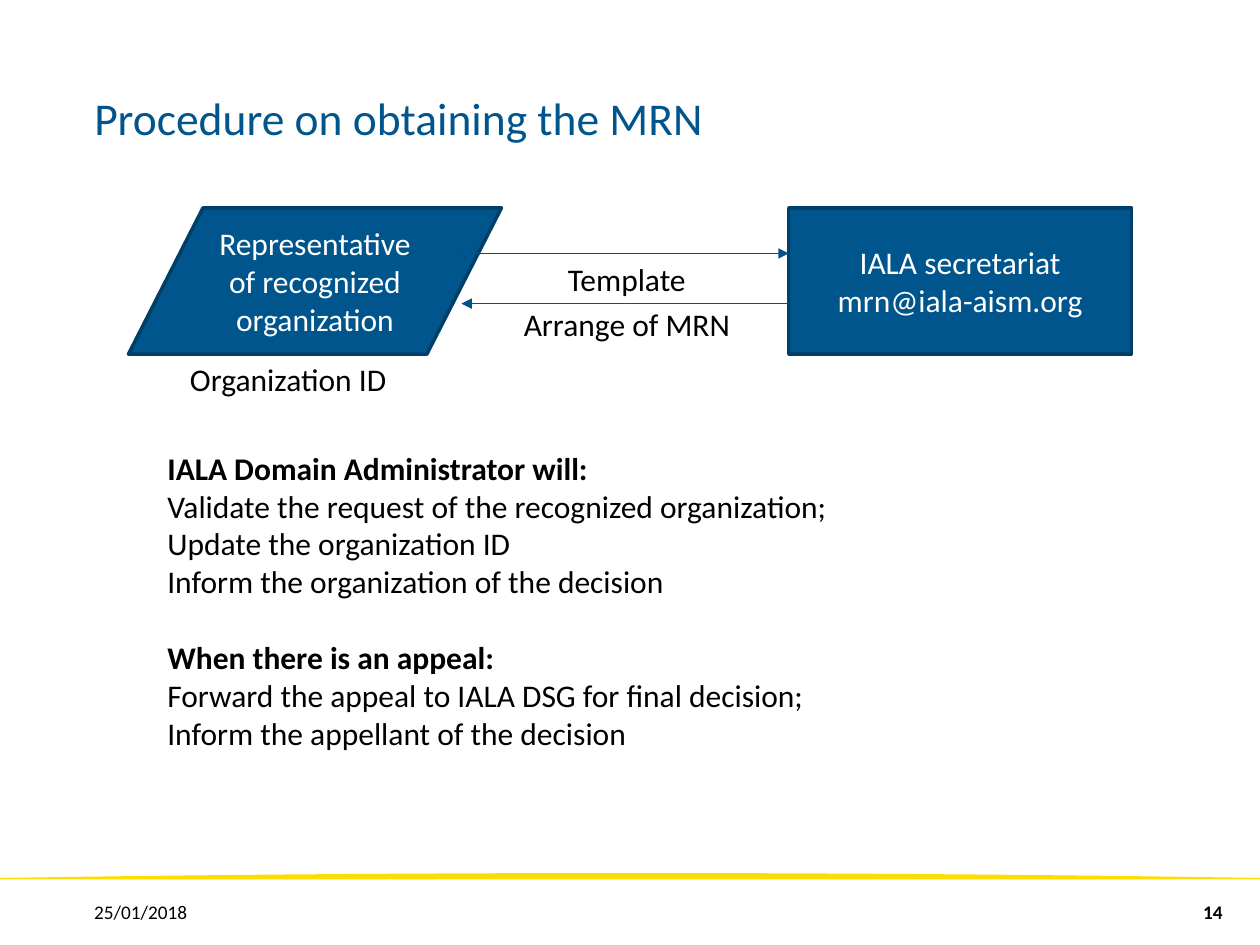
import pptx
import pptx.util
import pptx.dml.color
import pptx.enum.shapes
import pptx.enum.text
import pptx.oxml.ns
from lxml import etree

Cm = pptx.util.Cm
Pt = pptx.util.Pt
ALIGN = pptx.enum.text.PP_ALIGN
ANCHOR = pptx.enum.text.MSO_ANCHOR
SHAPE = pptx.enum.shapes.MSO_SHAPE
qn = pptx.oxml.ns.qn

COLORS = {"blue": "00558C", "outline": "003F68", "arrow": "005389",
          "yellow": "FFDC00", "white": "FFFFFF", "black": "000000"}

TITLE = "Procedure on obtaining the MRN"
PARTIES = [
    (SHAPE.FLOWCHART_DATA, 2.59, 7.52, ["Representative of recognized organization"]),
    (SHAPE.RECTANGLE, 15.9, 6.91, ["IALA secretariat", "mrn@iala-aism.org"]),
]
ARROWS = [((9.3, 5.11), (15.9, 5.11)), ((15.9, 6.12), (9.3, 6.12))]
LABELS = [
    ("Organization ID", 3.58, 7.14, 4.52),
    ("Template", 11.2, 5.11, 2.92),
    ("Arrange of MRN", 10.31, 6.02, 4.72),
]
DUTIES = [
    ("IALA Domain Administrator will:", [
        "Validate the request of the recognized organization;",
        "Update the organization ID",
        "Inform the organization of the decision"]),
    ("When there is an appeal:", [
        "Forward the appeal to IALA DSG for final decision;",
        "Inform the appellant of the decision"]),
]
FOOTERS = [("25/01/2018", 1.9, 5.89, ALIGN.LEFT, False),
           ("14", 23.5, 1.9, ALIGN.CENTER, True)]


def rgb(name):
    return pptx.dml.color.RGBColor.from_string(COLORS[name])


def place(shape, left, top, width, height):
    shape.left, shape.top = Cm(left), Cm(top)
    shape.width, shape.height = Cm(width), Cm(height)


def set_frame(frame, anchor, inset=None, wrap=True):
    frame.auto_size = pptx.enum.text.MSO_AUTO_SIZE.NONE
    frame.word_wrap = wrap
    frame.vertical_anchor = anchor
    if inset is not None:
        frame.margin_left = frame.margin_right = Cm(inset)
        frame.margin_top = frame.margin_bottom = Cm(inset)


def write(frame, lines, size=18, color="black", align=ALIGN.LEFT, bold=False):
    frame.text = "\n".join(lines)
    for paragraph in frame.paragraphs:
        paragraph.alignment = align
        font = paragraph.font
        font.name, font.size, font.bold = "Calibri", Pt(size), bold
        font.color.rgb = rgb(color)


def add_text(slide, text, left, top, width, height, anchor, inset=None, wrap=True, **style):
    box = slide.shapes.add_textbox(Cm(left), Cm(top), Cm(width), Cm(height))
    set_frame(box.text_frame, anchor, inset, wrap)
    write(box.text_frame, [text], **style)


def add_swoosh(slide):
    steps = 40
    curve = [(25.43 * (1 - step / steps), 17.6 + 0.1 * (1 - 2 * step / steps) ** 2)
             for step in range(steps + 1)]
    points = [(Cm(x), Cm(y)) for x, y in [(0, 17.73), (25.43, 17.73)] + curve]
    builder = slide.shapes.build_freeform(*points[0])
    builder.add_line_segments(points[1:], close=True)
    swoosh = builder.convert_to_shape()
    swoosh.shadow.inherit = False
    swoosh.fill.solid()
    swoosh.fill.fore_color.rgb = rgb("yellow")
    swoosh.line.fill.background()


def add_party(slide, kind, left, width, lines):
    shape = slide.shapes.add_shape(kind, Cm(left), Cm(4.19), Cm(width), Cm(2.95))
    shape.shadow.inherit = False
    shape.fill.solid()
    shape.fill.fore_color.rgb = rgb("blue")
    shape.line.color.rgb = rgb("outline")
    shape.line.width = Pt(2)
    set_frame(shape.text_frame, ANCHOR.MIDDLE)
    write(shape.text_frame, lines, color="white", align=ALIGN.CENTER)


def add_arrow(slide, start, end):
    arrow = slide.shapes.add_connector(
        pptx.enum.shapes.MSO_CONNECTOR.STRAIGHT, *map(Cm, start + end))
    arrow.line.color.rgb = rgb("arrow")
    arrow.line.width = Pt(0.75)
    etree.SubElement(arrow.line._get_or_add_ln(), qn("a:tailEnd"), type="triangle")
    etree.SubElement(arrow._element.spPr, qn("a:effectLst"))


def fill_duties(body):
    place(body, 3.12, 8.92, 13.97, 6.4)
    set_frame(body.text_frame, ANCHOR.TOP, wrap=False)
    headings = [heading for heading, _ in DUTIES]
    lines = [line for heading, tasks in DUTIES for line in [heading] + tasks]
    body.text_frame.text = "\n".join(lines)
    for paragraph in body.text_frame.paragraphs:
        properties = paragraph._p.get_or_add_pPr()
        properties.set("marL", "0")
        properties.set("indent", "0")
        etree.SubElement(properties, qn("a:buNone"))
    write_style = body.text_frame.paragraphs
    for paragraph in write_style:
        is_heading = paragraph.text in headings
        paragraph.space_before = Pt(22 if paragraph.text in headings[1:] else 0)
        font = paragraph.font
        font.name, font.size, font.bold = "Calibri", Pt(18), is_heading
        font.color.rgb = rgb("black")


def main():
    presentation = pptx.Presentation()
    presentation.slide_width, presentation.slide_height = Cm(25.4), Cm(19.05)
    slide = presentation.slides.add_slide(presentation.slide_layouts[1])

    title = slide.shapes.title
    place(title, 1.9, 0.33, 21.59, 2.59)
    set_frame(title.text_frame, ANCHOR.BOTTOM, inset=0)
    write(title.text_frame, [TITLE], size=26, color="blue")
    fill_duties(slide.placeholders[1])

    add_swoosh(slide)
    for party in PARTIES:
        add_party(slide, *party)
    for start, end in ARROWS:
        add_arrow(slide, start, end)
    for text, left, top, width in LABELS:
        add_text(slide, text, left, top, width, 1.02, ANCHOR.TOP, wrap=False)
    for text, left, width, align, bold in FOOTERS:
        add_text(slide, text, left, 17.73, width, 1.32, ANCHOR.MIDDLE, inset=0,
                 size=11, align=align, bold=bold)

    presentation.save("out.pptx")


if __name__ == "__main__":
    main()
